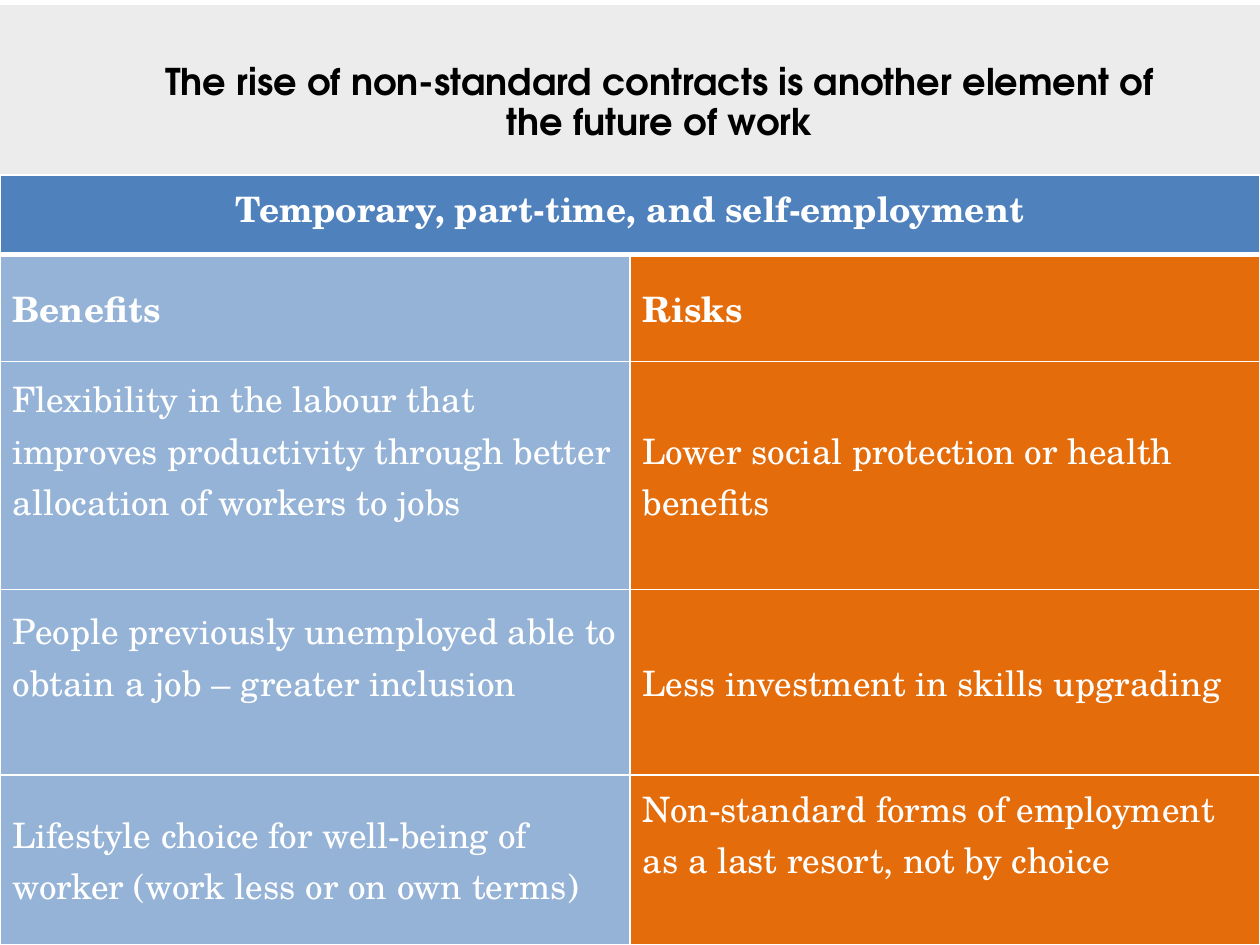
from lxml import etree
from pptx import Presentation
from pptx.dml.color import RGBColor
from pptx.enum.shapes import MSO_SHAPE
from pptx.enum.text import MSO_ANCHOR, PP_ALIGN
from pptx.oxml.ns import qn
from pptx.util import Inches, Pt

CENTER, LEFT = PP_ALIGN.CENTER, PP_ALIGN.LEFT
MIDDLE, TOP = MSO_ANCHOR.MIDDLE, MSO_ANCHOR.TOP
RECTANGLE = MSO_SHAPE.RECTANGLE

WHITE, BLACK, GREY = "FFFFFF", "000000", "D9D9D9"
HEADER_BLUE, BENEFIT_BLUE, RISK_ORANGE = "4F81BD", "95B3D7", "E46C0A"
LINE_HEIGHT = 0.41


def color(value):
    return RGBColor.from_string(value)


def write(frame, text, font, size, fill, bold=False, align=LEFT, spacing=None):
    """Fill a text frame with one formatted paragraph."""
    frame.word_wrap = True
    para = frame.paragraphs[0]
    para.alignment = align
    para.line_spacing = spacing
    span = para.add_run()
    span.text = text
    span.font.name = font
    span.font.size = Pt(size)
    span.font.bold = bold
    span.font.color.rgb = color(fill)


deck = Presentation()
deck.slide_width, deck.slide_height = Inches(10), Inches(7.5)
page = deck.slides.add_slide(deck.slide_layouts[6])

# Title band
band = page.shapes.add_shape(RECTANGLE, Inches(0), Inches(0.04), Inches(10), Inches(1.38))
band.shadow.inherit = False
band.line.fill.background()
band.fill.solid()
band.fill.fore_color.rgb = color(GREY)
band_color = band.fill._xPr.find(qn("a:solidFill"))[0]
etree.SubElement(band_color, qn("a:alpha"), val="49000")

# Table: text and whether the text sits half a line above the middle
rows = [
    (0.85, ("Benefits", False), ("Risks", False)),
    (1.81,
     ("Flexibility in the labour that improves productivity through better "
      "allocation of workers to jobs", True),
     ("Lower social protection or health benefits", False)),
    (1.47,
     ("People previously unemployed able to obtain a job – greater inclusion", True),
     ("Less investment in skills upgrading", False)),
    (1.35,
     ("Lifestyle choice for well-being of worker (work less or on own terms)", False),
     ("Non-standard forms of employment as a last resort, not by choice", True)),
]
header_height = 0.63
total_height = header_height + sum(row[0] for row in rows)
table = page.shapes.add_table(
    len(rows) + 1, 2, Inches(0), Inches(1.39), Inches(10), Inches(total_height)
).table
for column in table.columns:
    column.width = Inches(5)

table.rows[0].height = Inches(header_height)
table.cell(0, 0).merge(table.cell(0, 1))
header = table.cell(0, 0)
header.vertical_anchor = TOP
write(header.text_frame, "Temporary, part-time, and self-employment",
      "TeX Gyre Schola", 20, WHITE, bold=True, align=CENTER)

for row_index, (height, *entries) in enumerate(rows, start=1):
    table.rows[row_index].height = Inches(height)
    for column_index, (text, raised) in enumerate(entries):
        cell = table.cell(row_index, column_index)
        cell.vertical_anchor = MIDDLE
        if raised:
            cell.margin_bottom = Inches(0.05 + LINE_HEIGHT)
        write(cell.text_frame, text, "TeX Gyre Schola", 20, WHITE, bold=row_index == 1)

for row_index in range(len(rows) + 1):
    for column_index, body_fill in enumerate((BENEFIT_BLUE, RISK_ORANGE)):
        cell = table.cell(row_index, column_index)
        properties = cell._tc.get_or_add_tcPr()
        widths = {"lnL": 1, "lnR": 1,
                  "lnT": 3 if row_index == 1 else 1,
                  "lnB": 3 if row_index == 0 else 1}
        for side, width in widths.items():
            border = etree.SubElement(properties, qn(f"a:{side}"), w=str(Pt(width)))
            paint = etree.SubElement(border, qn("a:solidFill"))
            etree.SubElement(paint, qn("a:srgbClr"), val=WHITE)
        cell.fill.solid()
        cell.fill.fore_color.rgb = color(HEADER_BLUE if row_index == 0 else body_fill)
        # The fill must follow the borders
        properties.append(properties.find(qn("a:solidFill")))

# Title
title = page.shapes.add_textbox(Inches(1.18), Inches(0.26), Inches(8.11), Inches(1.12))
title.text_frame.vertical_anchor = MIDDLE
write(title.text_frame,
      "The rise of non-standard contracts is another element of the future of work",
      "TeX Gyre Adventor", 21, BLACK, bold=True, align=CENTER, spacing=0.9)

deck.save("out.pptx")
